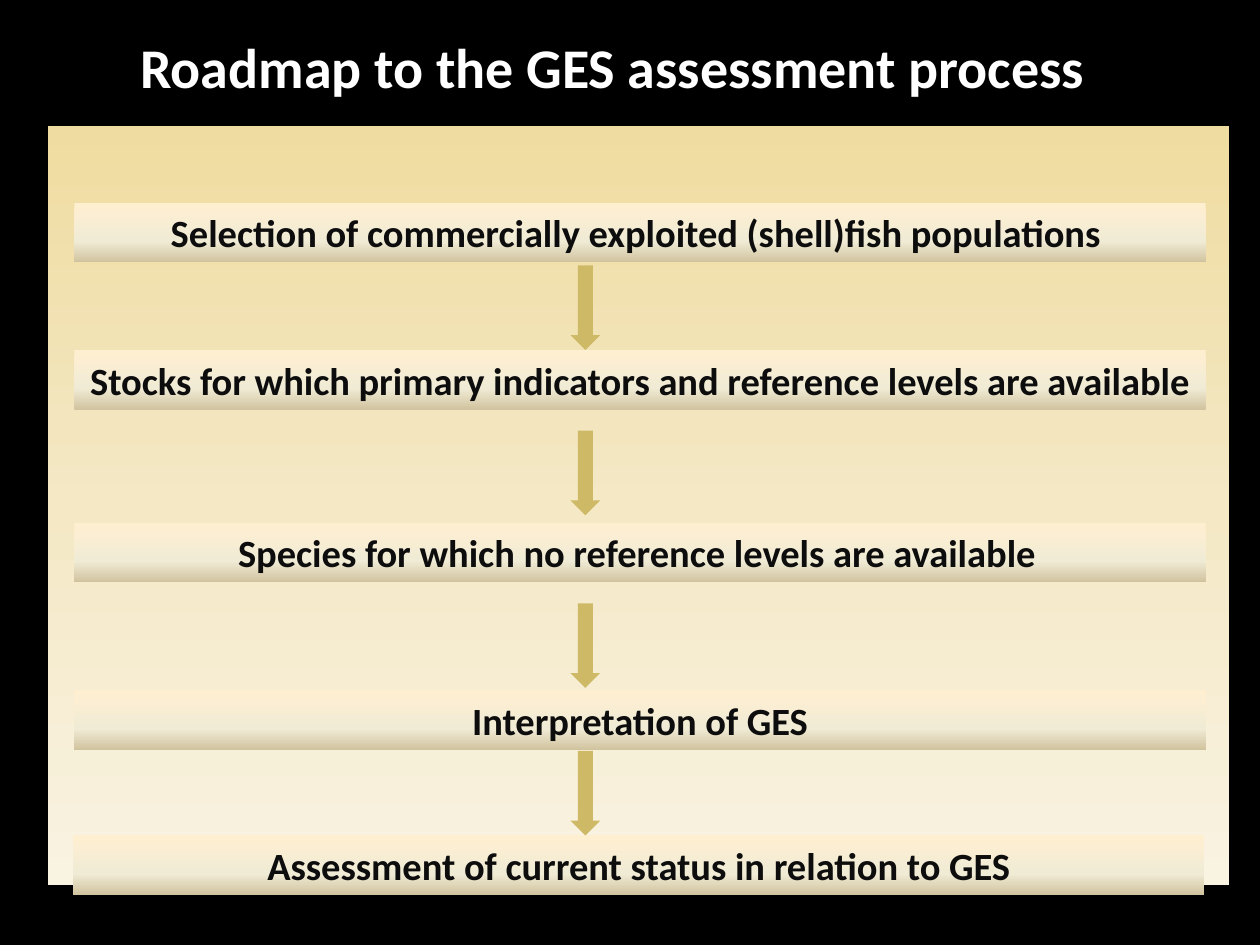
from copy import deepcopy

from pptx import Presentation
from pptx.dml.color import RGBColor
from pptx.enum.shapes import MSO_SHAPE
from pptx.enum.text import MSO_ANCHOR, MSO_AUTO_SIZE, PP_ALIGN
from pptx.oxml.ns import qn
from pptx.util import Pt

RECTANGLE = MSO_SHAPE.RECTANGLE
DOWN_ARROW = MSO_SHAPE.DOWN_ARROW
MIDDLE = MSO_ANCHOR.MIDDLE
TOP = MSO_ANCHOR.TOP
CENTER = PP_ALIGN.CENTER
FIT_SHAPE = MSO_AUTO_SIZE.SHAPE_TO_FIT_TEXT

PANEL_STOPS = [(0, "EFDCA0"), (0.5, "F4E8C5"), (1, "F9F3E2")]
STEP_STOPS = [(0, "FFEFD1"), (0.65, "F0EBD5"), (1, "D1C39F")]

# left, top, spans of (text, size)
STEPS = [
    (42.5, 115.9, [("Selection of commercially exploited (shell)fish populations ", 22)]),
    (42.5, 200.1, [("Stocks for which primary indicators and reference levels are available ", 22)]),
    (42.5, 298.7, [("Species for which no reference levels are available", 22), (" ", 16)]),
    (42.5, 394.5, [("Interpretation of GES", 22)]),
    (41.8, 477.4, [("Assessment of current status in relation to GES", 22)]),
]
ARROW_TOPS = [151.7, 246.1, 344.8, 429.1]


def color(hex_string):
    return RGBColor.from_string(hex_string)


class RoadmapPage:
    font = "Calibri"
    ink = "0D0D0D"
    arrow_fill = "CEB966"

    def __init__(self, deck, background):
        self.page = deck.slides.add_slide(deck.slide_layouts[6])
        fill = self.page.background.fill
        fill.solid()
        fill.fore_color.rgb = color(background)

    def shape(self, kind, left, top, width, height):
        shape = self.page.shapes.add_shape(kind, Pt(left), Pt(top), Pt(width), Pt(height))
        shape.shadow.inherit = False
        shape.line.fill.background()
        return shape

    def gradient_box(self, left, top, width, height, stops):
        """Add a rectangle shaded from top to bottom through three stops."""
        box = self.shape(RECTANGLE, left, top, width, height)
        box.fill.gradient()
        box.fill.gradient_angle = 270
        stop_list = next(box._element.spPr.iter(qn("a:gsLst")))
        stop_list.append(deepcopy(stop_list[0]))
        for stop, (position, hex_string) in zip(box.fill.gradient_stops, stops):
            stop.position = position
            stop.color.rgb = color(hex_string)
        return box

    def add_text(self, box, spans, ink, anchor, wrap):
        frame = box.text_frame
        frame.word_wrap = wrap
        frame.auto_size = FIT_SHAPE
        frame.vertical_anchor = anchor
        para = frame.paragraphs[0]
        para.alignment = CENTER
        for text, size in spans:
            span = para.add_run()
            span.text = text
            span.font.name = self.font
            span.font.size = Pt(size)
            span.font.bold = True
            span.font.color.rgb = color(ink)

    def step(self, left, top, spans):
        box = self.gradient_box(left, top, 646.5, 33.9, STEP_STOPS)
        self.add_text(box, spans, self.ink, MIDDLE, True)

    def arrow(self, top):
        arrow = self.shape(DOWN_ARROW, 326, top, 17, 48.3)
        arrow.fill.solid()
        arrow.fill.fore_color.rgb = color(self.arrow_fill)

    def title(self, text):
        box = self.page.shapes.add_textbox(Pt(70.5), Pt(15.1), Pt(559.5), Pt(46))
        self.add_text(box, [(text, 32)], "FFFFFF", TOP, False)


def main():
    deck = Presentation()
    deck.slide_width = Pt(720)
    deck.slide_height = Pt(540)
    roadmap = RoadmapPage(deck, "000000")
    roadmap.gradient_box(27.5, 72, 675, 434, PANEL_STOPS)
    for left, top, spans in STEPS:
        roadmap.step(left, top, spans)
    for top in ARROW_TOPS:
        roadmap.arrow(top)
    roadmap.title("Roadmap to the GES assessment process")
    deck.save("out.pptx")


if __name__ == "__main__":
    main()
